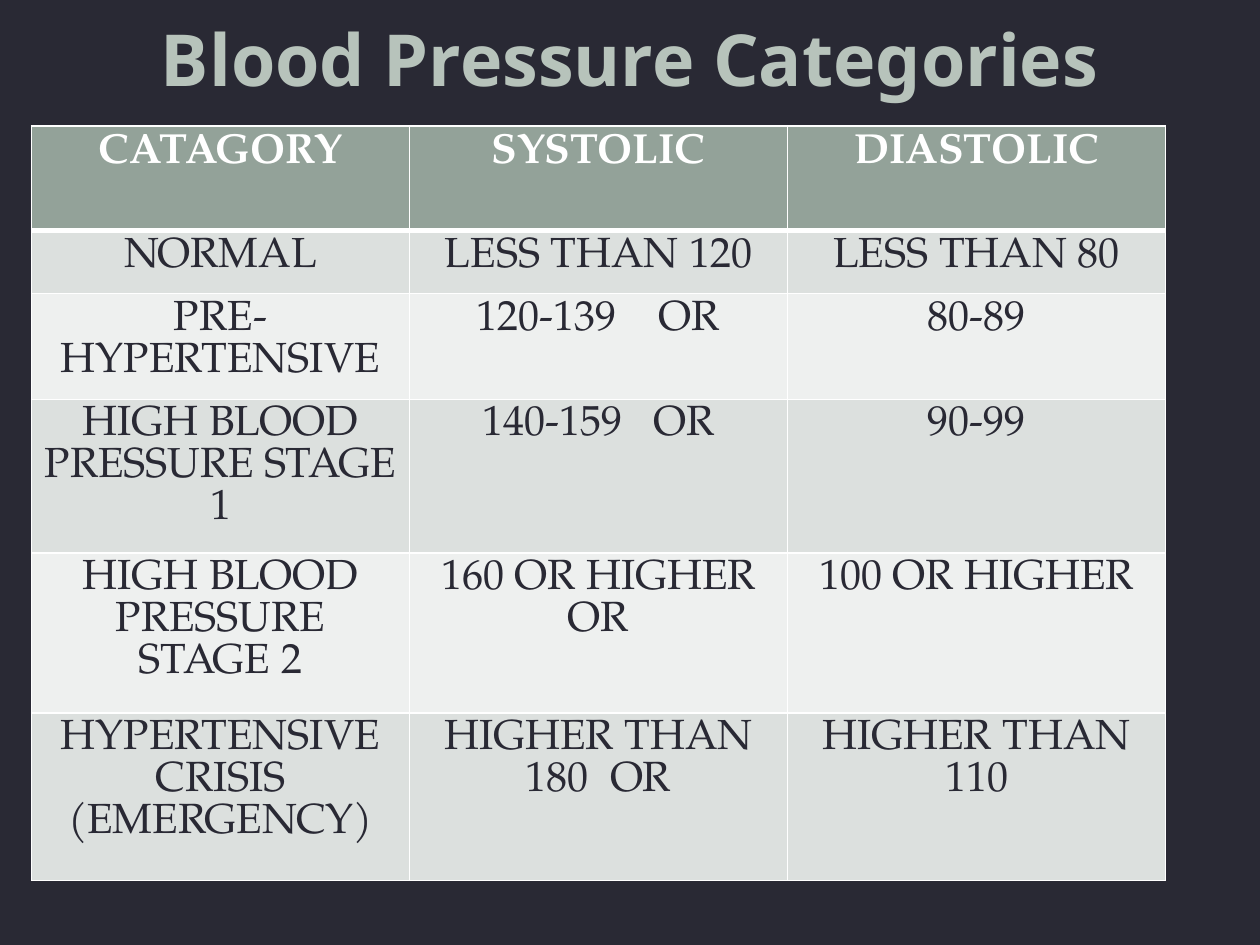
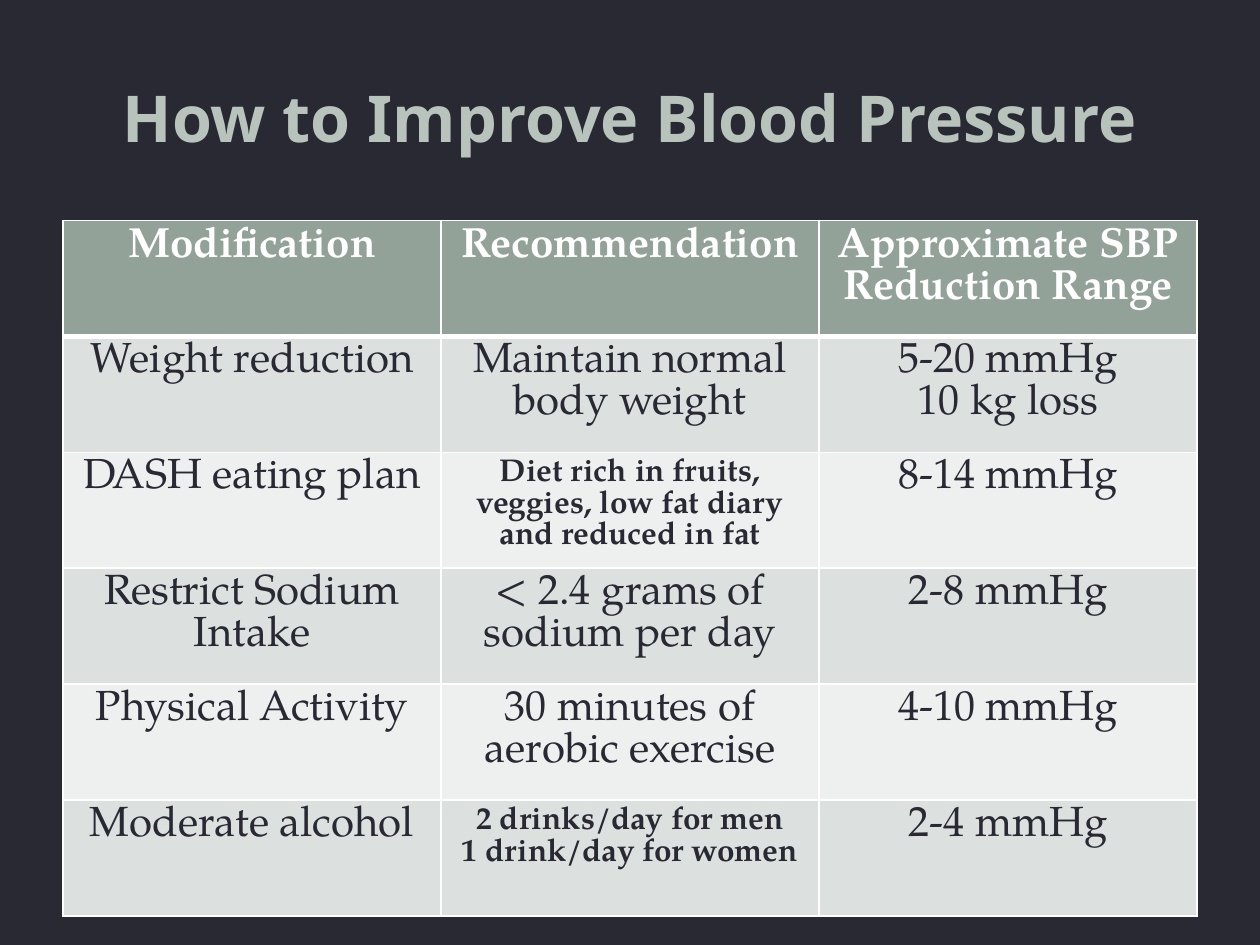
from lxml.etree import SubElement
from pptx import Presentation
from pptx.dml.color import RGBColor
from pptx.enum.text import MSO_ANCHOR, MSO_AUTO_SIZE, PP_ALIGN
from pptx.oxml.ns import qn
from pptx.util import Inches, Pt

COLORS = {
    "background": "292934",
    "title": "B7C3BB",
    "header": "93A299",
    "header_text": "FFFFFF",
    "body_text": "292934",
    "dark_band": "DCE0DE",
    "light_band": "EEF0EF",
    "border": "FFFFFF",
}
TITLE_FONT = "Noto Sans"
TABLE_FONT = "TeX Gyre Pagella"
BODY_SIZE, SMALL_SIZE = 24, 18
COLUMN_WIDTH = 3

# A line break inside a cell starts a new paragraph.
SLIDES = [
    {
        "title": "Blood Pressure Categories",
        "title_size": 41,
        "title_box": (0.5, 0, 9, 0.92),
        "table_origin": (0.25, 1),
        "row_heights": [0.83, 0.5, 0.84, 1.22, 1.27, 1.33],
        "rows": [
            ("CATAGORY", "SYSTOLIC", "DIASTOLIC"),
            ("NORMAL", "LESS THAN 120", "LESS THAN 80"),
            ("PRE-\nHYPERTENSIVE", "120-139 OR", "80-89"),
            ("HIGH BLOOD PRESSURE STAGE 1", "140-159 OR", "90-99"),
            ("HIGH BLOOD\nPRESSURE\nSTAGE 2", "160 OR HIGHER OR", "100 OR HIGHER"),
            ("HYPERTENSIVE CRISIS\n(EMERGENCY)", "HIGHER THAN 180 OR", "HIGHER THAN 110"),
        ],
    },
    {
        "title": "How to Improve Blood Pressure",
        "title_size": 36.9,
        "title_box": (0.5, 0.3, 9, 1.25),
        "table_origin": (0.5, 1.75),
        "row_heights": [0.92] * 6,
        "rows": [
            ("Modification", "Recommendation", "Approximate SBP Reduction Range"),
            ("Weight reduction", "Maintain normal body weight", "5-20 mmHg\n10 kg loss"),
            ("DASH eating plan",
             "Diet rich in fruits, veggies, low fat diary and reduced in fat", "8-14 mmHg"),
            ("Restrict Sodium Intake", "< 2.4 grams of sodium per day", "2-8 mmHg"),
            ("Physical Activity", "30 minutes of aerobic exercise", "4-10 mmHg"),
            ("Moderate alcohol", "2 drinks/day for men\n1 drink/day for women", "2-4 mmHg"),
        ],
    },
]
# Cells set smaller and bold, by slide title, row and column
SMALL_CELLS = {(SLIDES[1]["title"], 2, 1), (SLIDES[1]["title"], 5, 1)}
# Extra points between the last word and the rest of the line
WIDE_GAPS = {"120-139 OR": 18, "140-159 OR": 12, "HIGHER THAN 180 OR": 6}


def set_attributes(target, values):
    for name, value in values.items():
        setattr(target, name, value)


def add_run(paragraph, text, font_name, size, bold, color):
    run = paragraph.add_run()
    run.text = text
    set_attributes(run.font, {"name": font_name, "size": Pt(size), "bold": bold})
    run.font.color.rgb = RGBColor.from_string(COLORS[color])
    return run


def add_title(slide, content):
    title = slide.shapes.title
    left, top, width, height = map(Inches, content["title_box"])
    set_attributes(title, {"left": left, "top": top, "width": width, "height": height})
    set_attributes(title.text_frame, {
        "word_wrap": True,
        "auto_size": MSO_AUTO_SIZE.NONE,
        "vertical_anchor": MSO_ANCHOR.MIDDLE,
    })
    paragraph = title.text_frame.paragraphs[0]
    paragraph.alignment = PP_ALIGN.CENTER
    add_run(paragraph, content["title"], TITLE_FONT, content["title_size"], True, "title")


def style_cell(cell, row_index):
    """Draw the cell borders, with a thick rule under the header, and fill its band."""
    widths = {
        "a:lnL": 1,
        "a:lnR": 1,
        "a:lnT": 3 if row_index == 1 else 1,
        "a:lnB": 3 if row_index == 0 else 1,
    }
    properties = cell._tc.get_or_add_tcPr()
    for tag, width in widths.items():
        line = SubElement(properties, qn(tag), w=str(Pt(width)))
        SubElement(SubElement(line, qn("a:solidFill")), qn("a:srgbClr"), val=COLORS["border"])
    band = "header" if row_index == 0 else ("light_band", "dark_band")[row_index % 2]
    cell.fill.solid()
    cell.fill.fore_color.rgb = RGBColor.from_string(COLORS[band])


def write_cell(cell, text, is_header, is_small):
    size = SMALL_SIZE if is_small else BODY_SIZE
    style = (TABLE_FONT, size, is_header or is_small, "header_text" if is_header else "body_text")
    for index, line in enumerate(text.split("\n")):
        frame = cell.text_frame
        paragraph = frame.add_paragraph() if index else frame.paragraphs[0]
        set_attributes(paragraph, {"alignment": PP_ALIGN.CENTER, "line_spacing": Pt(size)})
        if line in WIDE_GAPS:
            start, space, end = line.rpartition(" ")
            add_run(paragraph, start, *style)
            gap = add_run(paragraph, space, *style)
            gap.font._element.set("spc", str(WIDE_GAPS[line] * 100))
            add_run(paragraph, end, *style)
        else:
            add_run(paragraph, line, *style)


def add_table(slide, content):
    rows, heights = content["rows"], content["row_heights"]
    column_count = len(rows[0])
    left, top = map(Inches, content["table_origin"])
    table = slide.shapes.add_table(
        len(rows), column_count, left, top,
        Inches(COLUMN_WIDTH * column_count), Inches(sum(heights))).table
    for column in table.columns:
        column.width = Inches(COLUMN_WIDTH)
    for row_index, (texts, height) in enumerate(zip(rows, heights)):
        table.rows[row_index].height = Inches(height)
        for column_index, text in enumerate(texts):
            cell = table.cell(row_index, column_index)
            style_cell(cell, row_index)
            is_small = (content["title"], row_index, column_index) in SMALL_CELLS
            write_cell(cell, text, row_index == 0, is_small)


def main():
    presentation = Presentation()
    set_attributes(presentation, {"slide_width": Inches(10), "slide_height": Inches(7.5)})
    background = presentation.slide_master.background.fill
    background.solid()
    background.fore_color.rgb = RGBColor.from_string(COLORS["background"])
    title_only = presentation.slide_layouts.get_by_name("Title Only")
    for content in SLIDES:
        slide = presentation.slides.add_slide(title_only)
        add_title(slide, content)
        add_table(slide, content)
    presentation.save("out.pptx")


if __name__ == "__main__":
    main()
